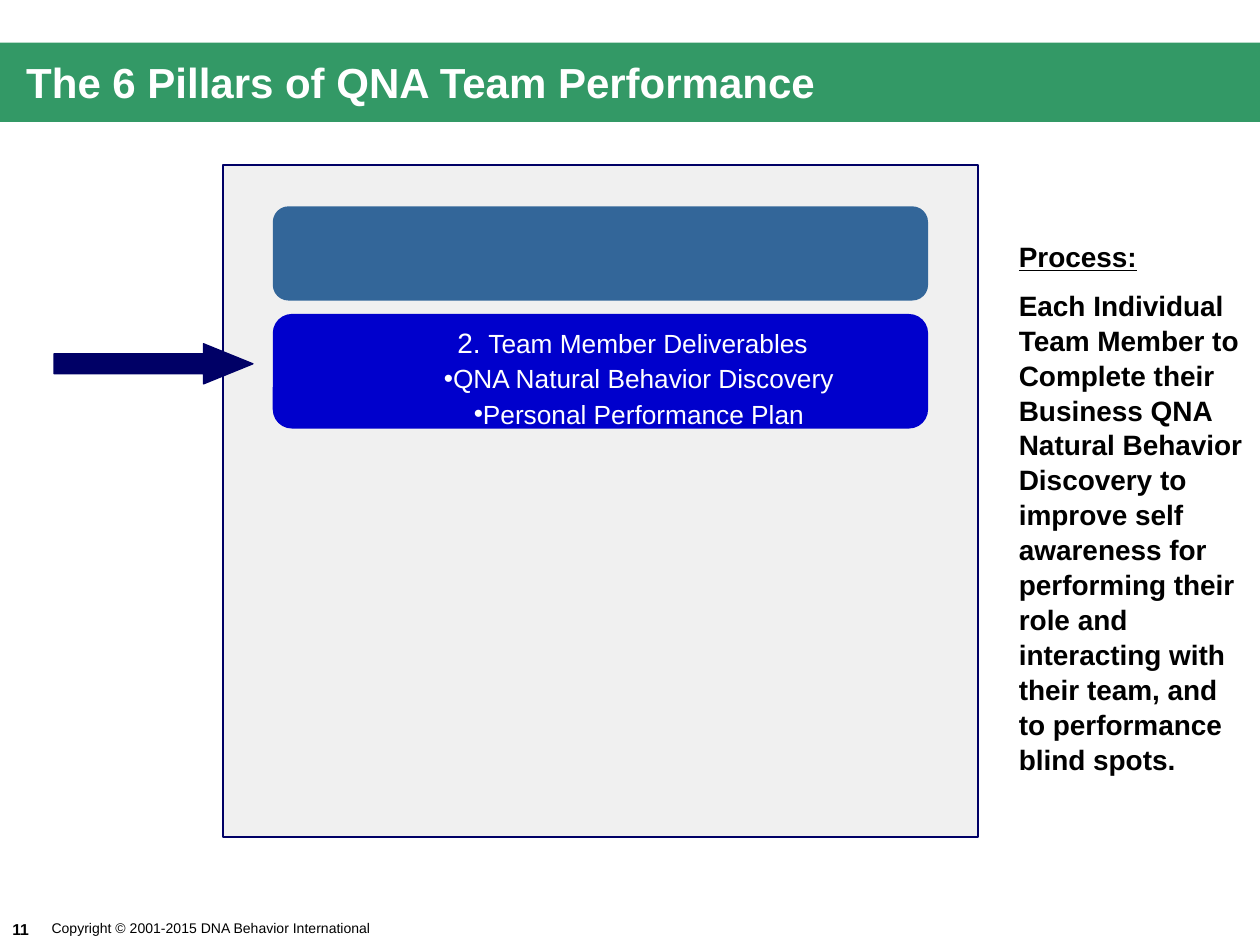
from lxml.etree import SubElement
from pptx import Presentation
from pptx.dml.color import RGBColor
from pptx.enum.shapes import MSO_SHAPE
from pptx.enum.text import MSO_ANCHOR, PP_ALIGN
from pptx.oxml.ns import qn
from pptx.util import Cm, Pt

COLORS = {
    "band": "339966",
    "panel": "F0F0F0",
    "navy": "000066",
    "first_pillar": "336699",
    "second_pillar": "0000CC",
    "light": "FFFFFF",
    "dark": "000000",
}


def color(name):
    return RGBColor.from_string(COLORS[name])


def add_block(slide, preset, box, fill, line=None, weight=1, adjustments=()):
    block = slide.shapes.add_shape(preset, *map(Cm, box))
    block.shadow.inherit = False
    block.fill.solid()
    block.fill.fore_color.rgb = color(fill)
    if line:
        block.line.color.rgb = color(line)
        block.line.width = Pt(weight)
    else:
        block.line.fill.background()
    for index, value in enumerate(adjustments):
        block.adjustments[index] = value
    return block


def add_frame(slide, box, anchor=MSO_ANCHOR.TOP, wrap=True, insets=(0.25, 0.13)):
    frame = slide.shapes.add_textbox(*map(Cm, box)).text_frame
    frame.word_wrap = wrap
    frame.vertical_anchor = anchor
    frame.margin_left = frame.margin_right = Cm(insets[0])
    frame.margin_top = frame.margin_bottom = Cm(insets[1])
    return frame


def write(frame, text, size=16, tint="dark", bold=False, underline=False,
          align=PP_ALIGN.LEFT, before=None, spacing=None, margin=0,
          bullet=False, lead="", lead_size=None):
    paragraph = frame.paragraphs[0]
    if paragraph.runs:
        paragraph = frame.add_paragraph()
        if before:
            paragraph.space_before = Pt(before)
    paragraph.alignment = align
    if spacing:
        paragraph.line_spacing = spacing
    properties = paragraph._p.get_or_add_pPr()
    properties.set("marL", str(Cm(margin)))
    properties.set("indent", str(Cm(0.25) if bullet else 0))
    if bullet:
        SubElement(properties, qn("a:buFont"), typeface="Arial")
        SubElement(properties, qn("a:buChar"), char="•")
    else:
        SubElement(properties, qn("a:buNone"))
    for words, points in ((lead, lead_size), (text, size)):
        if words:
            run = paragraph.add_run()
            run.text = words
            run.font.name = "Arial"
            run.font.size = Pt(points)
            run.font.bold = bold
            run.font.underline = underline
            run.font.color.rgb = color(tint)


def add_header(slide, box):
    left, top, width, height = box
    add_block(slide, MSO_SHAPE.RECTANGLE, box, "band")
    title = add_frame(slide, (left, top + 0.18, width - 2.1, height - 0.38),
                      anchor=MSO_ANCHOR.MIDDLE, insets=(0, 0))
    write(title, "The 6 Pillars of QNA Team Performance", size=24,
          tint="light", bold=True, margin=0.53)


def add_footer(slide, box):
    left, top, width, height = box
    number = add_frame(slide, (left, top, 1.8, height), anchor=MSO_ANCHOR.MIDDLE)
    write(number, "11", size=9, bold=True)
    notice = add_frame(slide, (left + 0.79, top - 0.03, width - 0.79, height),
                       anchor=MSO_ANCHOR.MIDDLE, wrap=False)
    write(notice, "Copyright © 2001-2015 DNA Behavior International", size=8)


def add_process(slide, box):
    process = add_frame(slide, box)
    write(process, "Process:", bold=True, underline=True, spacing=1.04)
    write(process, "Each Individual Team Member to Complete their Business QNA "
          "Natural Behavior Discovery to improve self awareness for performing "
          "their role and interacting with their team, and to performance "
          "blind spots.", bold=True, before=8, spacing=1.04)


def add_pillars(slide, box):
    left, top, width, height = box
    add_block(slide, MSO_SHAPE.RECTANGLE, box, "panel", line="navy")
    pillar_left, pillar_width = left + 1, width - 2
    for offset, pillar_height, fill in ((0.83, 1.9, "first_pillar"),
                                        (3.0, 2.31, "second_pillar")):
        add_block(slide, MSO_SHAPE.ROUNDED_RECTANGLE,
                  (pillar_left, top + offset, pillar_width, pillar_height),
                  fill, adjustments=(0.167,))
    deliverables = add_frame(slide, (left + 1.32, top + 3.07, 12.6, 3.02))
    layout = dict(size=15, tint="light", align=PP_ALIGN.CENTER, margin=1.27,
                  before=1.5, spacing=1.04)
    write(deliverables, "Team Member Deliverables", lead="2. ", lead_size=16,
          **layout)
    for item in ("QNA Natural Behavior Discovery", "Personal Performance Plan"):
        write(deliverables, item, bullet=True, **layout)
    add_block(slide, MSO_SHAPE.RIGHT_ARROW, (left - 3.41, top + 3.6, 4.01, 0.81),
              "navy", line="navy", weight=0.75, adjustments=(0.5, 1.23))


def main():
    deck = Presentation()
    deck.slide_width, deck.slide_height = Cm(25.4), Cm(19.05)
    slide = deck.slides.add_slide(deck.slide_layouts[6])
    add_header(slide, (0, 0.86, 25.4, 1.6))
    add_footer(slide, (0, 18.42, 7.85, 0.63))
    add_process(slide, (20.29, 4.67, 5.11, 10.85))
    add_pillars(slide, (4.5, 3.33, 15.21, 13.54))
    deck.save("out.pptx")


if __name__ == "__main__":
    main()
